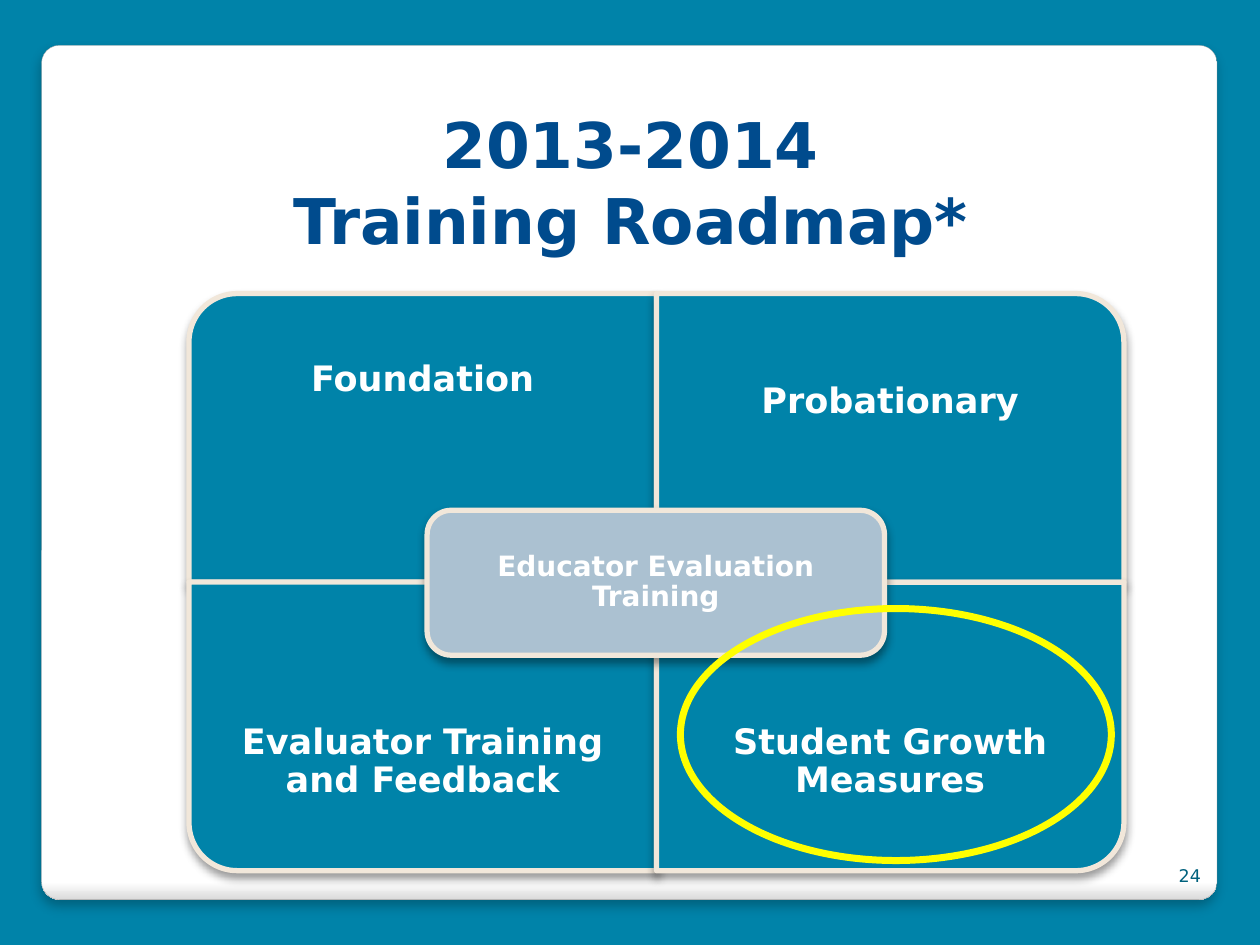
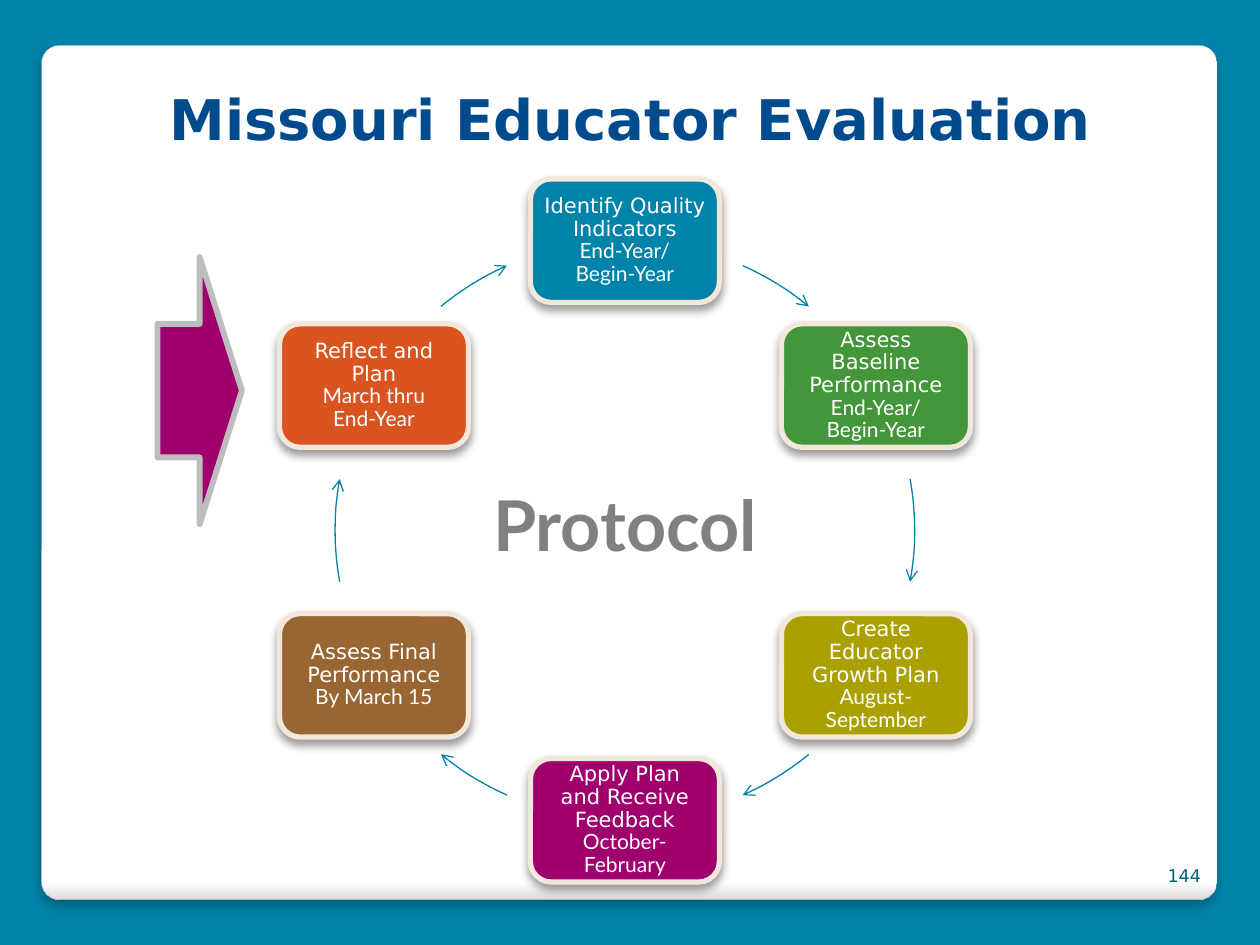
import math

import pptx
import pptx.dml.color
import pptx.enum.shapes
import pptx.enum.text
import pptx.oxml
import pptx.oxml.ns
import pptx.util
from pptx.util import Inches

COLORS = {
    "teal": "0083A9", "white": "FFFFFF", "panel_foot": "DADADA", "panel_edge": "A4A4A4",
    "title": "004B8D", "number": "00617D", "cream": "F1E7DA", "hub": "ABC1D1",
    "yellow": "FFFF00", "green": "439639", "olive": "AAA100", "plum": "A0006E",
    "brown": "996633", "orange": "D9541E", "gray": "808080", "silver": "BDBDBD",
}
MAIN_FONT, SECOND_FONT = "DejaVu Sans", "Lato"
SHAPE = pptx.enum.shapes.MSO_SHAPE
ALIGN = pptx.enum.text.PP_ALIGN
ANCHOR = pptx.enum.text.MSO_ANCHOR


def color(name):
    return pptx.dml.color.RGBColor.from_string(COLORS[name])


class Deck:
    """Holds the shared style and the slide being filled."""

    def __init__(self):
        self.prs = pptx.Presentation()
        self.prs.slide_width, self.prs.slide_height = Inches(10), Inches(7.5)
        backdrop = self.prs.slide_master.background.fill
        backdrop.solid()
        backdrop.fore_color.rgb = color("teal")
        self.slide = None

    def new_slide(self, title, size, box, number):
        self.slide = self.prs.slides.add_slide(self.prs.slide_layouts[5])
        self.panel()
        heading = self.slide.shapes.title
        heading.left, heading.top, heading.width, heading.height = map(Inches, box)
        self.add_text(heading, [(title, MAIN_FONT)], size, "title", bold=True,
                      anchor=ANCHOR.TOP, inset=0.09)
        self.label((9.13, 6.68, 0.5, 0.4), number, 10, "number",
                   align=ALIGN.RIGHT, anchor=ANCHOR.BOTTOM, inset=0.05)

    def panel(self):
        panel = self.shape(SHAPE.ROUNDED_RECTANGLE, (0.33, 0.36, 9.33, 6.78),
                           "white", "panel_edge", 0.16)
        panel.adjustments[0] = 0.021
        panel.fill.gradient()
        panel.fill.gradient_angle = 270
        for stop, position, name in zip(panel.fill.gradient_stops, (0.98, 1),
                                        ("white", "panel_foot")):
            stop.position = position
            stop.color.rgb = color(name)
        self.cast_shadow(panel, 25, 6, 4)
        # The panel lies behind the title
        tree = self.slide.shapes._spTree
        tree.remove(panel._element)
        tree.insert(2, panel._element)

    def shape(self, kind, box, fill, line, width):
        shape = self.slide.shapes.add_shape(kind, *map(Inches, box))
        shape.shadow.inherit = False
        if fill:
            shape.fill.solid()
            shape.fill.fore_color.rgb = color(fill)
        else:
            shape.fill.background()
        shape.line.color.rgb = color(line)
        shape.line.width = pptx.util.Pt(width)
        return shape

    def card(self, kind, box, fill):
        card = self.shape(kind, box, fill, "cream", 3)
        self.cast_shadow(card, 40, 5.2, 3)
        return card

    def cast_shadow(self, shape, opacity, blur, distance):
        effects = shape._element.spPr.find(pptx.oxml.ns.qn("a:effectLst"))
        effects.append(pptx.oxml.parse_xml(
            f'<a:outerShdw {pptx.oxml.ns.nsdecls("a")} blurRad="{pptx.util.Pt(blur)}" '
            f'dist="{pptx.util.Pt(distance)}" dir="5400000" rotWithShape="0">'
            f'<a:srgbClr val="000000"><a:alpha val="{opacity * 1000}"/></a:srgbClr>'
            '</a:outerShdw>'))

    def arc_arrow(self, box, start, end):
        """Arc with an arrowhead; angles run clockwise from the top."""
        arc = self.shape(SHAPE.ARC, box, None, "teal", 0.75)
        for index, angle in enumerate((start, end)):
            # Stored in 1/60000 degree, while adjustments count in 1/100000
            arc.adjustments[index] = (angle - 90) % 360 * 0.6
        arc.line._get_or_add_ln().append(pptx.oxml.parse_xml(
            f'<a:tailEnd {pptx.oxml.ns.nsdecls("a")} type="arrow"/>'))

    def label(self, box, text, size, ink, font=MAIN_FONT, **style):
        label = self.slide.shapes.add_textbox(*map(Inches, box))
        self.add_text(label, [(text, font)], size, ink, **style)

    def add_text(self, shape, runs, size, ink, bold=False, align=ALIGN.CENTER,
                 anchor=ANCHOR.MIDDLE, inset=0.05, spacing=1.0):
        frame = shape.text_frame
        frame.word_wrap = True
        frame.auto_size = pptx.enum.text.MSO_AUTO_SIZE.NONE
        frame.vertical_anchor = anchor
        frame.margin_top = frame.margin_bottom = Inches(inset)
        frame.margin_left = frame.margin_right = Inches(inset if spacing < 1 else 0.1)
        paragraph = frame.paragraphs[0]
        paragraph.alignment = align
        paragraph.line_spacing = spacing
        lines = [(line, font) for text, font in runs for line in text.split("\n")]
        for index, (line, font) in enumerate(lines):
            if index:
                paragraph.add_line_break()
            run = paragraph.add_run()
            run.text = line
            run.font.name, run.font.size, run.font.bold = font, pptx.util.Pt(size), bold
            run.font.color.rgb = color(ink)


def training_roadmap(deck):
    deck.new_slide("2013-2014\nTraining Roadmap*", 36, (0.67, 0.75, 8.67, 1.15), "24")

    # Four quadrants, each with its round corner turned outwards
    left, top, width, height = 1.5, 2.33, 3.71, 2.29
    caption_height = 1.72
    quadrants = [  # caption, column, row, rotation, upward shift of the caption
        ("Foundation", 0, 0, 270, 0.17),
        ("Probationary", 1, 0, 0, 0),
        ("Evaluator Training and Feedback", 0, 1, 180, 0),
        ("Student Growth Measures", 1, 1, 90, 0),
    ]
    for caption, column, row, rotation, rise in quadrants:
        x, y = left + column * width, top + row * height
        w, h = (height, width) if rotation % 180 else (width, height)
        box = (x + (width - w) / 2, y + (height - h) / 2, w, h)
        deck.card(SHAPE.ROUND_1_RECTANGLE, box, "teal").rotation = rotation
        caption_top = y + row * (height - caption_height) - rise
        deck.label((x, caption_top, width, caption_height), caption, 20, "white",
                   bold=True, inset=0.16, spacing=0.9)

    # Hub and highlight
    hub = deck.card(SHAPE.ROUNDED_RECTANGLE, (3.39, 4.05, 3.63, 1.15), "hub")
    deck.add_text(hub, [("Educator Evaluation Training", MAIN_FONT)], 16, "white",
                  bold=True, inset=0.07, spacing=0.9)
    deck.shape(SHAPE.OVAL, (5.4, 4.83, 3.42, 2), None, "yellow", 4)


def educator_evaluation(deck):
    deck.new_slide("Missouri Educator Evaluation", 32, (0.67, 0.58, 8.67, 1.32), "144")

    # Cycle of six steps, clockwise from the top
    center_x, center_y, radius = 4.96, 4.21, 2.3
    step_width, step_height = 1.5, 0.98
    ring = (center_x - radius, center_y - radius, 2 * radius, 2 * radius)
    steps = [  # step, period, fill, start and end angle of the arrow that follows
        ("Identify Quality Indicators", "End-Year/\nBegin-Year", "teal", 24, 39.4),
        ("Assess Baseline Performance", "End-Year/\nBegin-Year", "green", 79.8, 100.2),
        ("Create Educator Growth Plan", "August-September", "olive", 140.6, 156),
        ("Apply Plan\nand Receive Feedback", "October-February", "plum", 204, 219.4),
        ("Assess Final Performance", "By March 15", "brown", 259.8, 280.2),
        ("Reflect and Plan", "March thru\nEnd-Year", "orange", 320.6, 336),
    ]
    for index, (step, period, fill, start, end) in enumerate(steps):
        angle = math.radians(index * 360 / len(steps))
        x = center_x + radius * math.sin(angle) - step_width / 2
        y = center_y - radius * math.cos(angle) - step_height / 2
        card = deck.card(SHAPE.ROUNDED_RECTANGLE, (x, y, step_width, step_height), fill)
        deck.add_text(card, [(step, MAIN_FONT), (period, SECOND_FONT)], 12, "white",
                      spacing=0.9)
        deck.arc_arrow(ring, start, end)

    # Centre word and pointer to the last step
    deck.label((2.67, 3.77, 4.58, 0.77), "Protocol", 40, "gray", SECOND_FONT,
               bold=True, anchor=ANCHOR.TOP)
    deck.shape(SHAPE.RIGHT_ARROW, (1.25, 2.04, 0.67, 2.12), "plum", "silver", 3.35)


def main():
    deck = Deck()
    training_roadmap(deck)
    educator_evaluation(deck)
    deck.prs.save("out.pptx")


if __name__ == "__main__":
    main()
